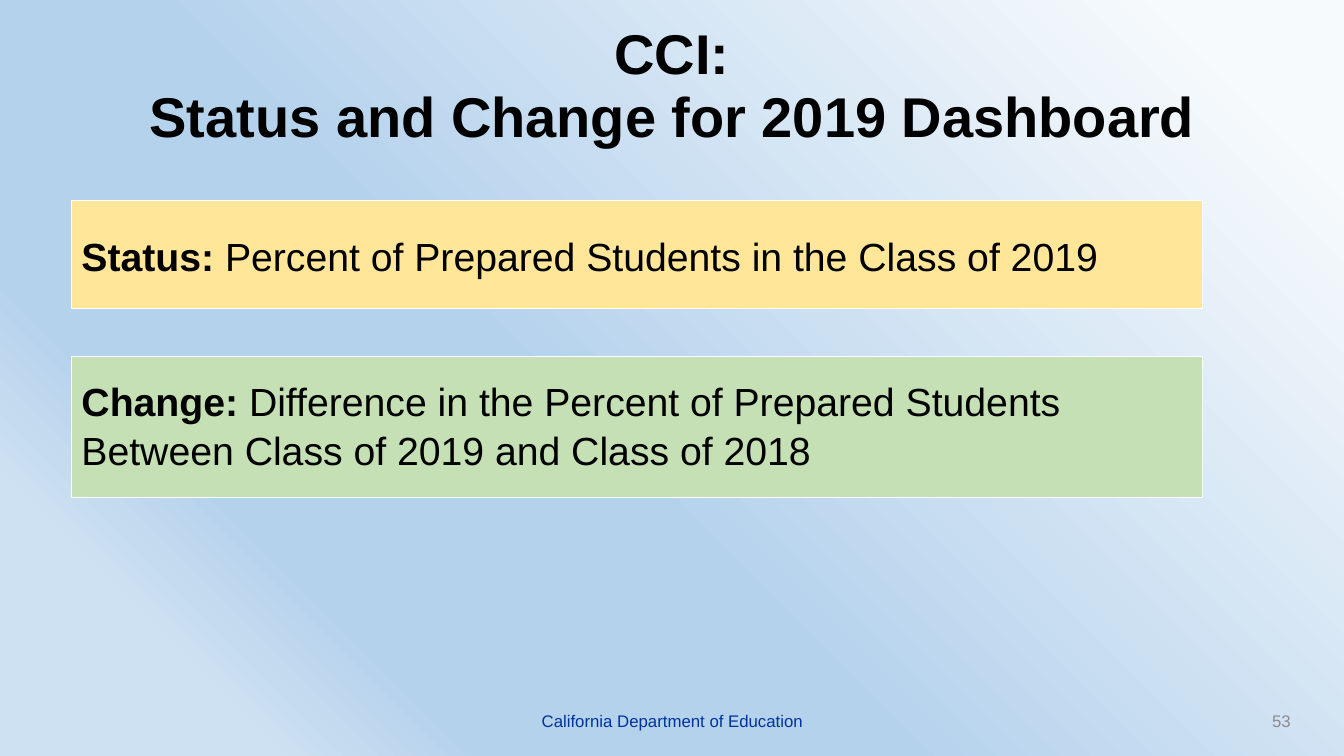
"""Build the CCI status and change slide."""
import pptx
import pptx.dml.color
import pptx.enum.shapes
import pptx.enum.text
import pptx.oxml
import pptx.util

ALIGN = pptx.enum.text.PP_ALIGN
RECTANGLE = pptx.enum.shapes.MSO_SHAPE.RECTANGLE
WIDTH, HEIGHT = 13.33, 7.5

TITLE = ["CCI:", "Status and Change for 2019 Dashboard"]
DEFINITIONS = [
    {"term": "Status: ", "meaning": "Percent of Prepared Students in the Class of 2019",
     "fill": "FFE699", "top": 1.99, "height": 1.07, "bottom_inset": 0.05},
    {"term": "Change: ", "meaning": "Difference in the Percent of Prepared Students "
     "Between Class of 2019 and Class of 2018",
     "fill": "C5E0B4", "top": 3.54, "height": 1.4, "bottom_inset": 0.1},
]
DEFINITION_LEFT, DEFINITION_WIDTH = 0.71, 11.22
FOOTERS = [
    ("California Department of Education", 4.42, 4.5, ALIGN.CENTER, "003399"),
    ("53", 9.9, 3, ALIGN.RIGHT, "8C8C8C"),
]
FOOTER_TOP, FOOTER_HEIGHT = 6.95, 0.4
THEME = {
    "font": "Arial", "text": "000000", "border": "FFFFFF",
    "title": 40, "body": 28, "footer": 12,
    "background": [(8, "F7FAFD"), (57, "B5D2EC"), (77, "B5D2EC"), (87, "CEE1F2")],
    "angle": 225,
}


def rgb(code):
    return pptx.dml.color.RGBColor.from_string(code)


def box(extent):
    return [pptx.util.Inches(length) for length in extent]


def paint_background(slide):
    fill = slide.background.fill
    fill.gradient()
    fill.gradient_angle = THEME["angle"]
    stops = slide.background._cSld.find(".//" + pptx.oxml.ns.qn("a:gsLst"))
    for stop in list(stops):
        stops.remove(stop)
    for share, code in THEME["background"]:
        stops.append(pptx.oxml.parse_xml(
            f'<a:gs {pptx.oxml.ns.nsdecls("a")} pos="{share * 1000}">'
            f'<a:srgbClr val="{code}"/></a:gs>'))


def prepare(shape, align, spacing=1.0):
    frame = shape.text_frame
    frame.word_wrap = True
    frame.vertical_anchor = pptx.enum.text.MSO_ANCHOR.MIDDLE
    paragraph = frame.paragraphs[0]
    paragraph.alignment = align
    paragraph.line_spacing = spacing
    return paragraph


def write(paragraph, words, size, code=THEME["text"], bold=False):
    run = paragraph.add_run()
    run.text = words
    run.font.name = THEME["font"]
    run.font.size = pptx.util.Pt(size)
    run.font.bold = bold
    run.font.color.rgb = rgb(code)


def add_title(slide):
    title = slide.shapes.add_textbox(*box((0, 0, WIDTH, 1.73)))
    paragraph = prepare(title, ALIGN.CENTER, 0.93)
    for index, line in enumerate(TITLE):
        if index:
            paragraph.add_line_break()
        write(paragraph, line, THEME["title"], bold=True)


def add_definition(slide, definition):
    extent = (DEFINITION_LEFT, definition["top"], DEFINITION_WIDTH, definition["height"])
    panel = slide.shapes.add_shape(RECTANGLE, *box(extent))
    panel.shadow.inherit = False
    panel.fill.solid()
    panel.fill.fore_color.rgb = rgb(definition["fill"])
    panel.line.color.rgb = rgb(THEME["border"])
    panel.line.width = pptx.util.Pt(0.75)
    panel.text_frame.margin_bottom = pptx.util.Inches(definition["bottom_inset"])
    paragraph = prepare(panel, ALIGN.LEFT, 1.04)
    write(paragraph, definition["term"], THEME["body"], bold=True)
    write(paragraph, definition["meaning"], THEME["body"])


def main():
    deck = pptx.Presentation()
    deck.slide_width, deck.slide_height = box((WIDTH, HEIGHT))
    slide = deck.slides.add_slide(deck.slide_layouts[6])
    paint_background(slide)
    add_title(slide)
    for definition in DEFINITIONS:
        add_definition(slide, definition)
    for words, left, width, align, code in FOOTERS:
        footer = slide.shapes.add_textbox(*box((left, FOOTER_TOP, width, FOOTER_HEIGHT)))
        write(prepare(footer, align), words, THEME["footer"], code)
    deck.save("out.pptx")


if __name__ == "__main__":
    main()
